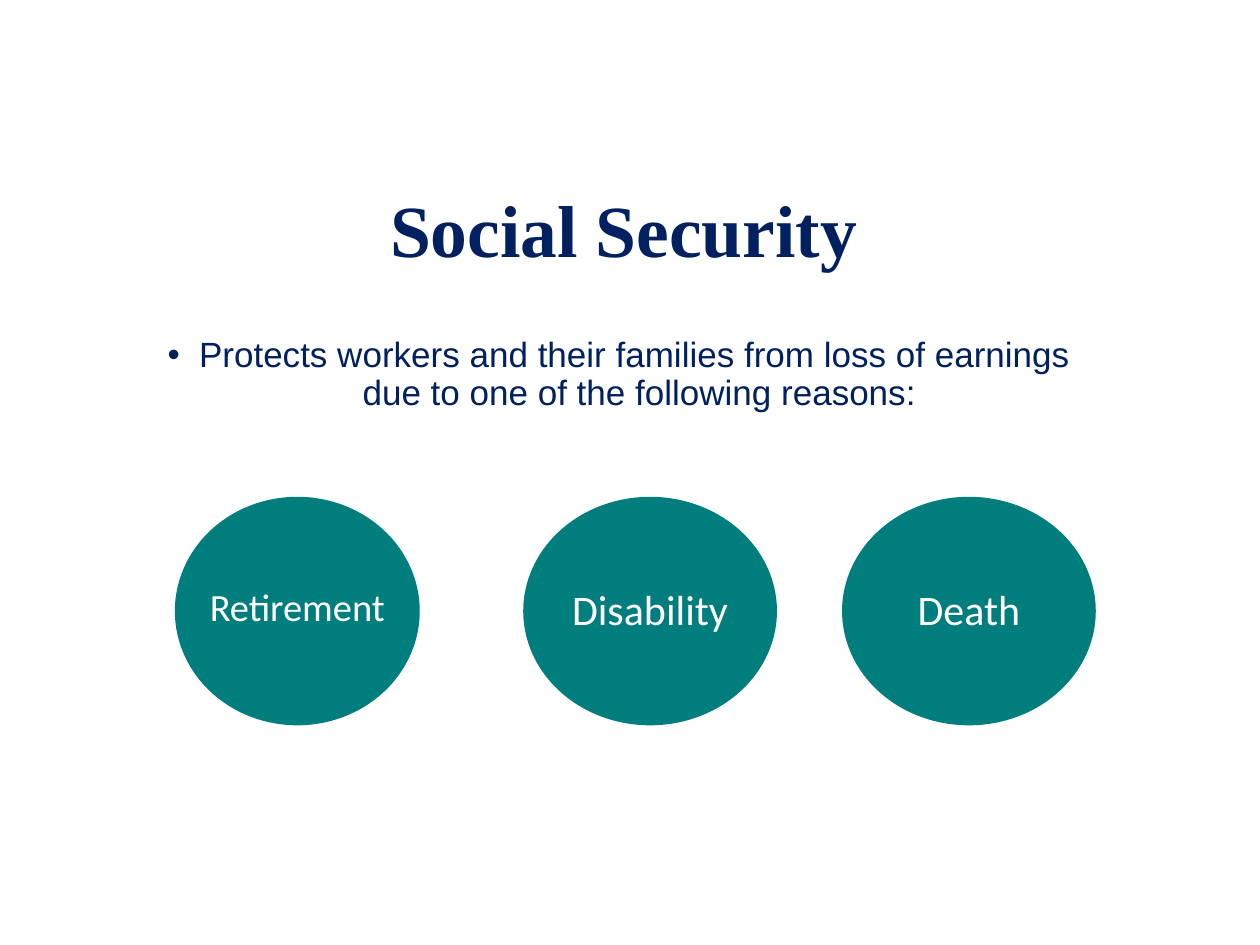
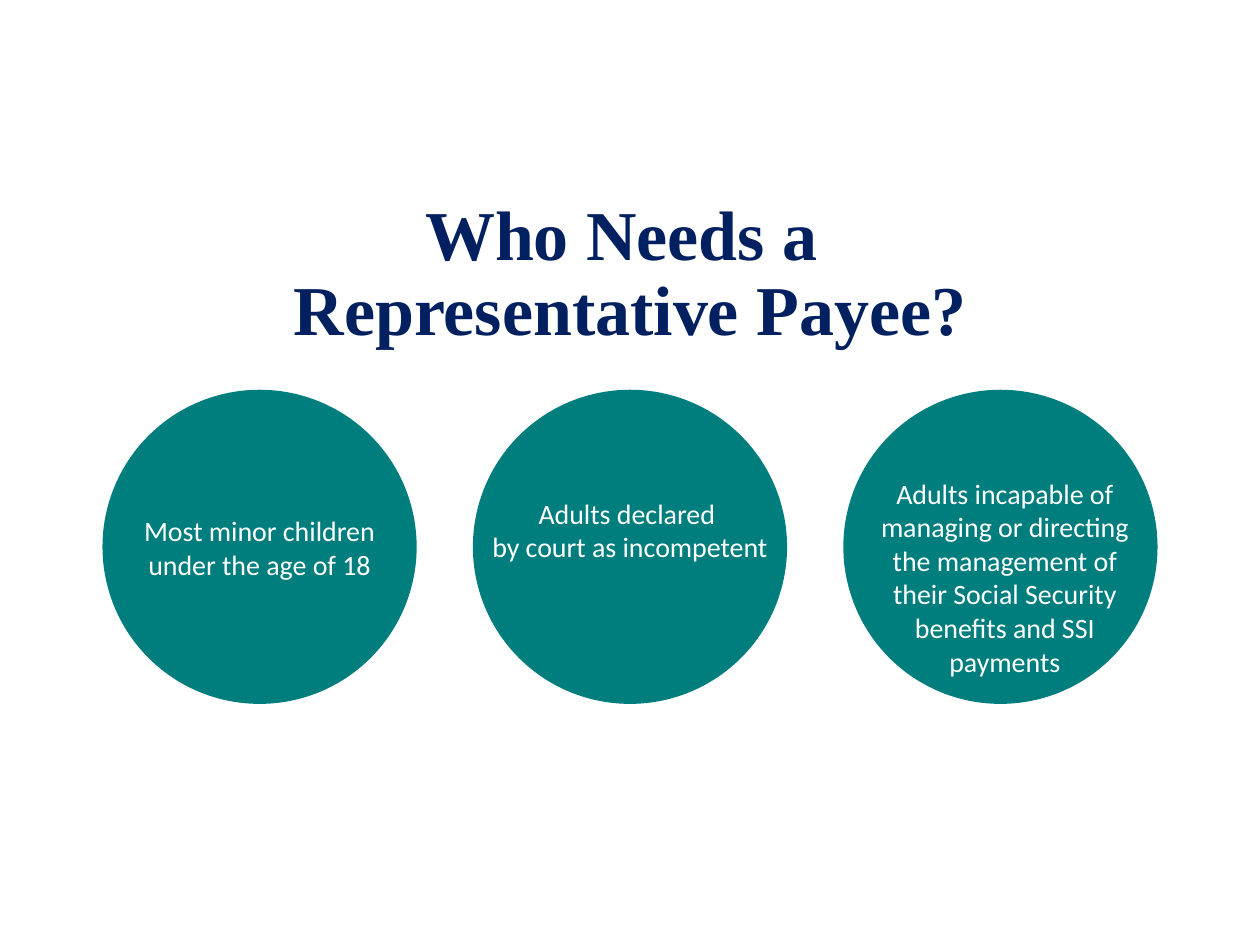
from pptx import Presentation
from pptx.dml.color import RGBColor
from pptx.enum.shapes import MSO_SHAPE
from pptx.enum.text import MSO_ANCHOR, PP_ALIGN
from pptx.oxml.ns import qn
from pptx.util import Inches, Pt
from lxml import etree

NAVY = RGBColor(0x00, 0x20, 0x60)
TEAL = RGBColor(0x00, 0x7D, 0x7D)
WHITE = RGBColor(0xFF, 0xFF, 0xFF)
TITLE_FONT, BODY_FONT, LABEL_FONT = "Times New Roman", "Arial", "Calibri"
ELLIPSE = MSO_SHAPE.OVAL
CENTER = PP_ALIGN.CENTER
TOP, MIDDLE = MSO_ANCHOR.TOP, MSO_ANCHOR.MIDDLE
COLUMNS, ROWS = 100, 75
TEXT_WIDTH = 86.2  # columns taken by titles and body text


class Deck:
    """Holds the shared style, the grid and the current slide."""

    def __init__(self):
        self.presentation = Presentation()
        self.presentation.slide_width = Inches(10)
        self.presentation.slide_height = Inches(7.5)
        self.slide = None

    def new_slide(self):
        self.slide = self.presentation.slides.add_slide(self.presentation.slide_layouts[6])
        fill = self.slide.background.fill
        fill.solid()
        fill.fore_color.rgb = WHITE

    def place(self, left, top, width, height):
        """Turn grid columns and rows into slide lengths."""
        column = self.presentation.slide_width / COLUMNS
        row = self.presentation.slide_height / ROWS
        return (round(left * column), round(top * row),
                round(width * column), round(height * row))

    def text(self, shapes, box, words, font, size, color, anchor=TOP):
        """Add a centred text box; a vertical tab in words breaks the line."""
        frame = shapes.add_textbox(*self.place(*box)).text_frame
        frame.word_wrap = True
        frame.vertical_anchor = anchor
        paragraph = frame.paragraphs[0]
        paragraph.text = words
        paragraph.alignment = CENTER
        paragraph.font.name = font
        paragraph.font.size = Pt(size)
        paragraph.font.color.rgb = color
        return paragraph

    def title(self, words, left, top, height, size):
        paragraph = self.text(self.slide.shapes, (left, top, TEXT_WIDTH, height), words,
                              TITLE_FONT, size, NAVY, MIDDLE)
        paragraph.line_spacing = 0.9
        paragraph.font.bold = True

    def bullet(self, words, left, top, height, size):
        paragraph = self.text(self.slide.shapes, (left, top, TEXT_WIDTH, height), words,
                              BODY_FONT, size, NAVY)
        paragraph.line_spacing = 0.9
        properties = paragraph._p.get_or_add_pPr()
        properties.set("marL", str(Inches(0.25)))
        properties.set("indent", str(Inches(-0.25)))
        bullet_font = etree.Element(qn("a:buFont"), typeface=BODY_FONT)
        bullet_mark = etree.Element(qn("a:buChar"), char="•")
        properties.find(qn("a:lnSpc")).addnext(bullet_font)
        bullet_font.addnext(bullet_mark)

    def circle(self, center, top, width, height, words, label_box, size):
        """Group an ellipse with its label; label_box is center, top, width, height."""
        shapes = self.slide.shapes.add_group_shape().shapes
        ellipse = shapes.add_shape(
            ELLIPSE, *self.place(center - width / 2, top, width, height))
        ellipse.shadow.inherit = False
        ellipse.fill.solid()
        ellipse.fill.fore_color.rgb = TEAL
        ellipse.line.color.rgb = TEAL
        ellipse.line.width = Pt(1)
        label_center, label_top, label_width, label_height = label_box
        self.text(shapes, (label_center - label_width / 2, label_top, label_width, label_height),
                  words, LABEL_FONT, size, WHITE)


def build_social_security(deck):
    deck.new_slide()
    deck.title("Social Security", 6.4, 12.7, 11.7, 42)
    deck.bullet("Protects workers and their families from loss of earnings \v"
                "due to one of the following reasons:", 6.4, 26.3, 36, 20)
    # Reasons: words, center, ellipse width, label width, text size
    reasons = [("Retirement", 23.6, 19.3, 20, 22),
               ("Disability", 51.6, 20, 18.6, 24),
               ("Death", 76.9, 20, 19.4, 24)]
    for words, center, width, label_width, size in reasons:
        deck.circle(center, 39.5, width, 18, words, (center, 45.8, label_width, 5), size)


def build_representative_payee(deck):
    deck.new_slide()
    deck.title("Who Needs a \vRepresentative Payee?", 6.9, 14.6, 14.5, 40)
    # People: words, label shift from the circle center, label top and height
    people = [("Most minor children under the age of 18", 0, 40.3, 6.4),
              ("Adults declared \vby court as incompetent", 0, 38.9, 9.1),
              ("Adults incapable of managing or directing the management of "
               "their Social Security benefits and SSI payments", 0.35, 37.3, 17.2)]
    diameter, pitch = 24.8, 29.4
    for index, (words, shift, label_top, label_height) in enumerate(people):
        center = COLUMNS / 2 + (index - 1) * pitch
        deck.circle(center, 31, diameter, diameter, words,
                    (center + shift, label_top, 24.1, label_height), 16)


def main():
    deck = Deck()
    build_social_security(deck)
    build_representative_payee(deck)
    deck.presentation.save("out.pptx")


if __name__ == "__main__":
    main()
